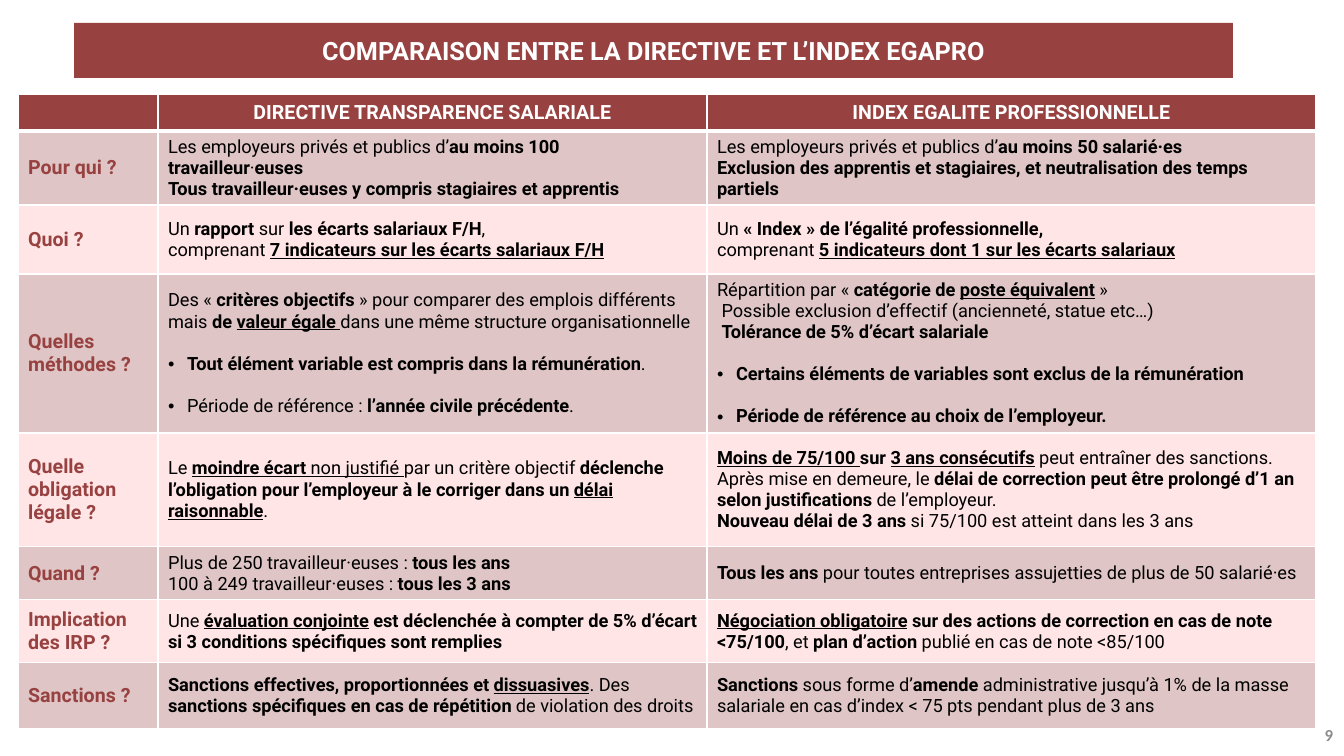
from dataclasses import dataclass

from pptx import Presentation
from pptx.dml.color import RGBColor
from pptx.enum.shapes import MSO_SHAPE
from pptx.enum.text import MSO_ANCHOR, PP_ALIGN
from pptx.oxml.xmlchemy import OxmlElement
from pptx.util import Emu, Pt

RECTANGLE = MSO_SHAPE.RECTANGLE
MIDDLE = MSO_ANCHOR.MIDDLE
LEFT, CENTER, RIGHT = PP_ALIGN.LEFT, PP_ALIGN.CENTER, PP_ALIGN.RIGHT

BRICK = RGBColor(0x98, 0x41, 0x41)
BLUSH = RGBColor(0xFF, 0xE5, 0xE5)
WHITE = RGBColor(0xFF, 0xFF, 0xFF)
BLACK = RGBColor(0x00, 0x00, 0x00)
GREY = RGBColor(0x8C, 0x8C, 0x8C)

SLIDE_WIDTH, SLIDE_HEIGHT = 1344, 756
EMU_PER_PX = 12192000 / SLIDE_WIDTH
BULLET = "• "
BULLET_INDENT = 19
BULLET_GAP = 15
TINT_PERCENT = 30
COLUMN_WIDTHS = (140, 549, 609)
BOLD_TOGGLE, UNDERLINE_TOGGLE = "*", "_"


@dataclass(frozen=True)
class Row:
    height: int
    label: str
    directive: str
    index: str


HEADER = Row(37, "", "*DIRECTIVE TRANSPARENCE SALARIALE*", "*INDEX EGALITE PROFESSIONNELLE*")

TOPICS = (
    Row(74, "*Pour qui ?*",
        "Les employeurs privés et publics d’*au moins 100 travailleur*·*euses*\n"
        "*Tous travailleur·euses y compris stagiaires et apprentis*",
        "Les employeurs privés et publics d’*au moins 50 salarié·es*\n"
        "*Exclusion des apprentis et stagiaires, et neutralisation des temps partiels*"),
    Row(69, "*Quoi ?*",
        "Un *rapport* sur *les écarts salariaux F/H*,\n"
        "comprenant *_7 indicateurs sur les écarts salariaux F/H_*",
        "Un *« Index » de l’égalité professionnelle,*\n"
        "comprenant *_5 indicateurs dont 1 sur les écarts salariaux_*"),
    Row(159, "*Quelles méthodes ?*",
        "Des « *critères objectifs* » pour comparer des emplois différents mais "
        "*de _valeur égale _*dans une même structure organisationnelle\n"
        "• *Tout élément variable est compris dans la rémunération*.\n"
        "• Période de référence : *l’année civile précédente*.",
        "Répartition par « *catégorie de _poste équivalent_ *»\n"
        " Possible exclusion d’effectif (ancienneté, statue etc…)\n"
        " *Tolérance de 5% d’écart salariale*\n"
        "• *Certains éléments de variables sont exclus de la rémunération*\n"
        "• *Période de référence au choix de l’employeur.*"),
    Row(114, "*Quelle obligation légale ?*",
        "Le *_moindre écart _*_non justifié _par un critère objectif *déclenche "
        "l’obligation pour l’employeur à le corriger dans un _délai raisonnable_*.",
        "*_Moins de 75/100 _sur _3 ans consécutifs_* peut entraîner des sanctions.\n"
        "Après mise en demeure, le *délai de correction peut être prolongé d’1 an "
        "selon justifications *de l’employeur.\n"
        "*Nouveau délai de 3 ans *si 75/100 est atteint dans les 3 ans"),
    Row(53, "*Quand ?*",
        "Plus de 250 travailleur·euses : *tous les ans*\n"
        "100 à 249 travailleur·euses :* tous les 3 ans*",
        "*Tous les ans *pour toutes entreprises assujetties de plus de 50 salarié·es"),
    Row(63, "*Implication des IRP ?*",
        "Une *_évaluation conjointe_ est déclenchée à compter de 5% d’écart "
        "si 3 conditions spécifiques sont remplies*",
        "*_Négociation obligatoire_ sur des actions de correction en cas de note "
        "<75/100*, et *plan d’action *publié en cas de note <85/100"),
    Row(66, "*Sanctions ?*",
        "*Sanctions effectives, proportionnées et _dissuasives_*. Des "
        "*sanctions spécifiques en cas de répétition *de violation des droits",
        "*Sanctions* sous forme d’*amende* administrative jusqu’à 1% de la masse "
        "salariale en cas d’index < 75 pts pendant plus de 3 ans"),
)


def px(length: int) -> Emu:
    return Emu(round(length * EMU_PER_PX))


def add_bullet(para) -> None:
    properties = para._p.get_or_add_pPr()
    properties.set("marL", str(px(BULLET_INDENT)))
    properties.set("indent", str(-px(BULLET_INDENT)))
    font = OxmlElement("a:buFont")
    font.set("typeface", "Arial")
    mark = OxmlElement("a:buChar")
    mark.set("char", BULLET.strip())
    properties.extend((font, mark))


def write_text(frame, text: str, *, size: int, color: RGBColor,
               font: str = "Roboto", align=LEFT) -> None:
    frame.word_wrap = True
    for number, line in enumerate(text.split("\n")):
        para = frame.add_paragraph() if number else frame.paragraphs[0]
        para.alignment = align
        if line.startswith(BULLET):
            para.space_before = Pt(BULLET_GAP)
            add_bullet(para)
            line = line.removeprefix(BULLET)
        if not line:
            ending = OxmlElement("a:endParaRPr")
            ending.set("sz", str(size * 100))
            para._p.append(ending)
        for weight, stretch in enumerate(line.split(BOLD_TOGGLE)):
            for stroke, words in enumerate(stretch.split(UNDERLINE_TOGGLE)):
                if words:
                    span = para.add_run()
                    span.text = words
                    span.font.name = font
                    span.font.size = Pt(size)
                    span.font.color.rgb = color
                    span.font.bold = weight % 2 == 1
                    span.font.underline = stroke % 2 == 1


def add_border(cell, side: str, points: int) -> None:
    line = OxmlElement(f"a:ln{side}")
    line.set("w", str(Pt(points)))
    fill = OxmlElement("a:solidFill")
    color = OxmlElement("a:srgbClr")
    color.set("val", str(WHITE))
    fill.append(color)
    line.append(fill)
    cell._tc.get_or_add_tcPr().append(line)


def format_cell(cell, row_number: int) -> None:
    cell.vertical_anchor = MIDDLE
    add_border(cell, "L", 1)
    add_border(cell, "R", 1)
    add_border(cell, "T", 3 if row_number == 1 else 1)
    add_border(cell, "B", 3 if row_number == 0 else 1)
    tinted = row_number % 2 == 1
    cell.fill.solid()
    cell.fill.fore_color.rgb = BRICK if tinted or row_number == 0 else BLUSH
    if tinted:
        alpha = OxmlElement("a:alpha")
        alpha.set("val", str(TINT_PERCENT * 1000))
        cell._tc.tcPr[-1][0].append(alpha)


def add_title(page) -> None:
    box = page.shapes.add_shape(RECTANGLE, px(74), px(23), px(1159), px(55))
    box.shadow.inherit = False
    box.fill.solid()
    box.fill.fore_color.rgb = BRICK
    box.line.fill.background()
    box.text_frame.vertical_anchor = MIDDLE
    write_text(box.text_frame, "*COMPARAISON ENTRE LA DIRECTIVE ET L’INDEX EGAPRO*",
               size=18, color=WHITE, align=CENTER)


def add_comparison(page) -> None:
    rows = (HEADER, *TOPICS)
    table = page.shapes.add_table(
        len(rows), len(COLUMN_WIDTHS), px(18), px(94),
        px(sum(COLUMN_WIDTHS)), px(sum(row.height for row in rows))).table
    table.horz_banding = False
    for column, width in zip(table.columns, COLUMN_WIDTHS):
        column.width = px(width)
    for row_number, row in enumerate(rows):
        table.rows[row_number].height = px(row.height)
        for column_number, text in enumerate((row.label, row.directive, row.index)):
            cell = table.cell(row_number, column_number)
            format_cell(cell, row_number)
            if row is HEADER:
                write_text(cell.text_frame, text, size=14, color=WHITE, align=CENTER)
            elif column_number == 0:
                write_text(cell.text_frame, text, size=14, color=BRICK)
            else:
                write_text(cell.text_frame, text, size=13, color=BLACK)


def add_page_number(page) -> None:
    box = page.shapes.add_textbox(px(1041), px(715), px(302), px(40))
    box.text_frame.vertical_anchor = MIDDLE
    write_text(box.text_frame, "*9*", size=12, color=GREY, font="Calibri", align=RIGHT)


def main() -> None:
    deck = Presentation()
    deck.slide_width, deck.slide_height = px(SLIDE_WIDTH), px(SLIDE_HEIGHT)
    page = deck.slides.add_slide(deck.slide_layouts[6])
    add_title(page)
    add_comparison(page)
    add_page_number(page)
    deck.save("out.pptx")


if __name__ == "__main__":
    main()
